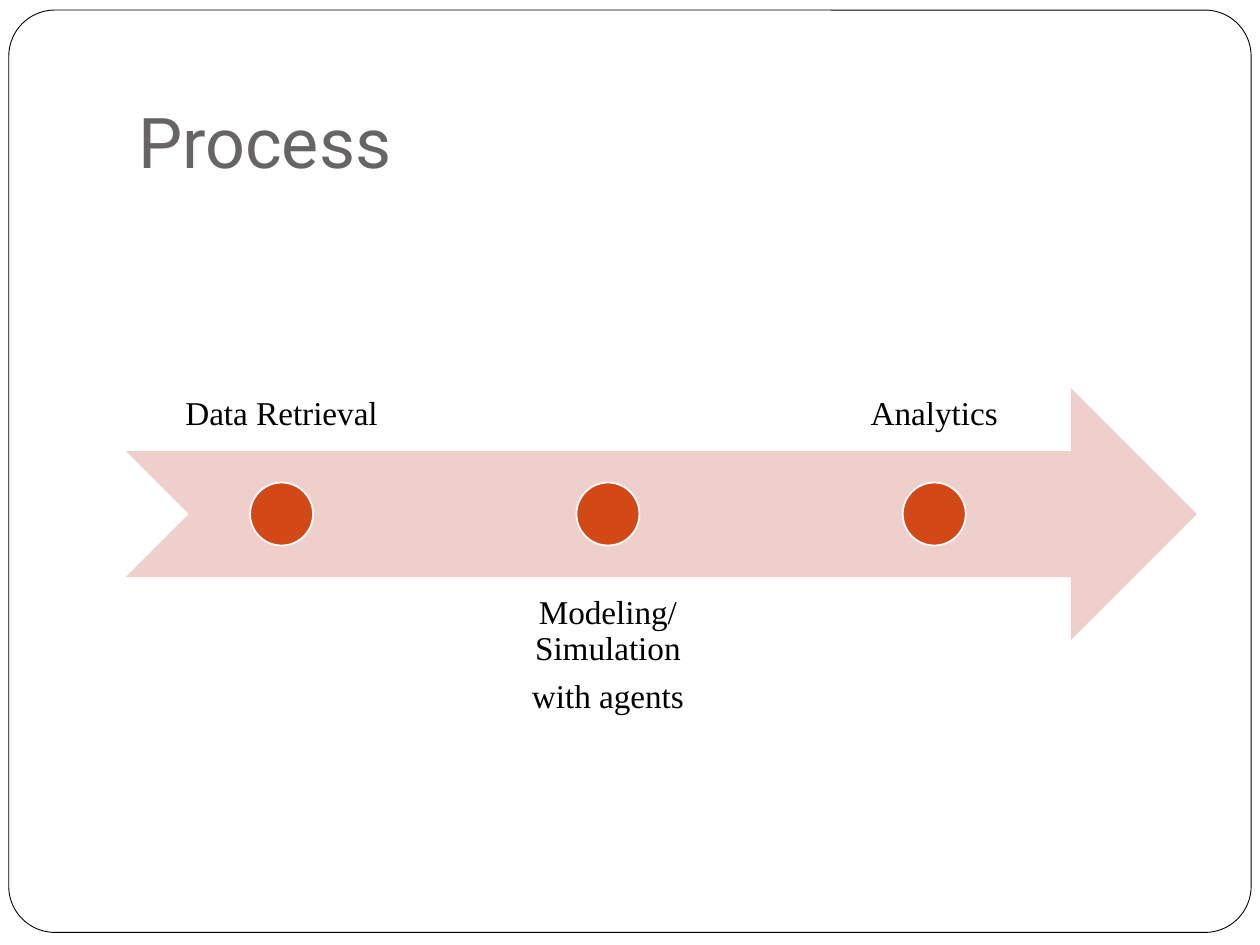
from dataclasses import dataclass

from pptx import Presentation
from pptx.dml.color import RGBColor
from pptx.enum.shapes import MSO_SHAPE as Shape
from pptx.enum.text import MSO_ANCHOR as Anchor, PP_ALIGN as Align
from pptx.util import Inches, Pt


@dataclass(frozen=True)
class Theme:
    white: str = "FFFFFF"
    black: str = "000000"
    title_gray: str = "696464"
    arrow_pink: str = "EFCFCC"
    marker_orange: str = "D34817"
    title_font: str = "Roboto"
    label_font: str = "Times New Roman"
    title_size: int = 40
    label_size: int = 19


def set_attributes(target, values):
    for name, value in values.items():
        setattr(target, name, value)


class SlideBuilder:
    def __init__(self, slide, theme):
        self.slide = slide
        self.theme = theme

    def add_shape(self, kind, box, fill, line=None, line_width=1):
        shape = self.slide.shapes.add_shape(kind, *map(Inches, box))
        shape.shadow.inherit = False
        shape.fill.solid()
        shape.fill.fore_color.rgb = RGBColor.from_string(fill)
        if line:
            shape.line.color.rgb = RGBColor.from_string(line)
            shape.line.width = Pt(line_width)
        else:
            shape.line.fill.background()
        return shape

    def add_text(self, lines, box, frame_format, font_format, color, paragraph_format):
        frame = self.slide.shapes.add_textbox(*map(Inches, box)).text_frame
        set_attributes(frame, {"word_wrap": True, **frame_format})
        frame.text = "\n".join(lines)
        for paragraph in frame.paragraphs:
            set_attributes(paragraph, paragraph_format)
            font = paragraph.runs[0].font
            set_attributes(font, font_format)
            font.color.rgb = RGBColor.from_string(color)

    def add_frame(self):
        frame = self.add_shape(Shape.ROUNDED_RECTANGLE, (0.07, 0.08, 9.86, 7.32),
                               self.theme.white, self.theme.black, 0.5)
        frame.adjustments[0] = 0.05

    def add_title(self, text):
        theme = self.theme
        self.add_text(
            [text], (1, 0.3, 8.5, 1.25),
            {"vertical_anchor": Anchor.BOTTOM, "margin_bottom": Inches(0.1)},
            {"name": theme.title_font, "size": Pt(theme.title_size)},
            theme.title_gray, {"alignment": Align.LEFT})

    def add_label(self, lines, box, anchor):
        theme = self.theme
        margins = {f"margin_{side}": Inches(0.15)
                   for side in ("left", "top", "right", "bottom")}
        self.add_text(
            lines, box, {"vertical_anchor": anchor, **margins},
            {"name": theme.label_font, "size": Pt(theme.label_size)}, theme.black,
            {"alignment": Align.CENTER, "line_spacing": 0.9, "space_after": Pt(7)})

    def add_process(self, steps):
        """Draw the arrow with a marker per step, labels alternating above and below."""
        left, top, width, height = 1, 3.08, 8.5, 2
        label_width, step_pitch, marker_size = 2.47, 2.59, 0.5
        self.add_shape(Shape.NOTCHED_RIGHT_ARROW, (left, top, width, height),
                       self.theme.arrow_pink)
        for index, lines in enumerate(steps):
            label_left = left + index * step_pitch
            below = index % 2 == 1
            label_top = top + 1.5 if below else top - 1.5
            self.add_label(lines, (label_left, label_top, label_width, height),
                           Anchor.TOP if below else Anchor.BOTTOM)
            marker_left = label_left + (label_width - marker_size) / 2
            marker_top = top + (height - marker_size) / 2
            self.add_shape(Shape.OVAL, (marker_left, marker_top, marker_size, marker_size),
                           self.theme.marker_orange, self.theme.white)


def main():
    presentation = Presentation()
    set_attributes(presentation, {"slide_width": Inches(10), "slide_height": Inches(7.5)})
    slide = presentation.slides.add_slide(presentation.slide_layouts[6])
    builder = SlideBuilder(slide, Theme())
    builder.add_frame()
    builder.add_title("Process")
    builder.add_process([
        ["Data Retrieval"],
        ["Modeling/Simulation", "with agents"],
        ["Analytics"],
    ])
    presentation.save("out.pptx")


if __name__ == "__main__":
    main()
